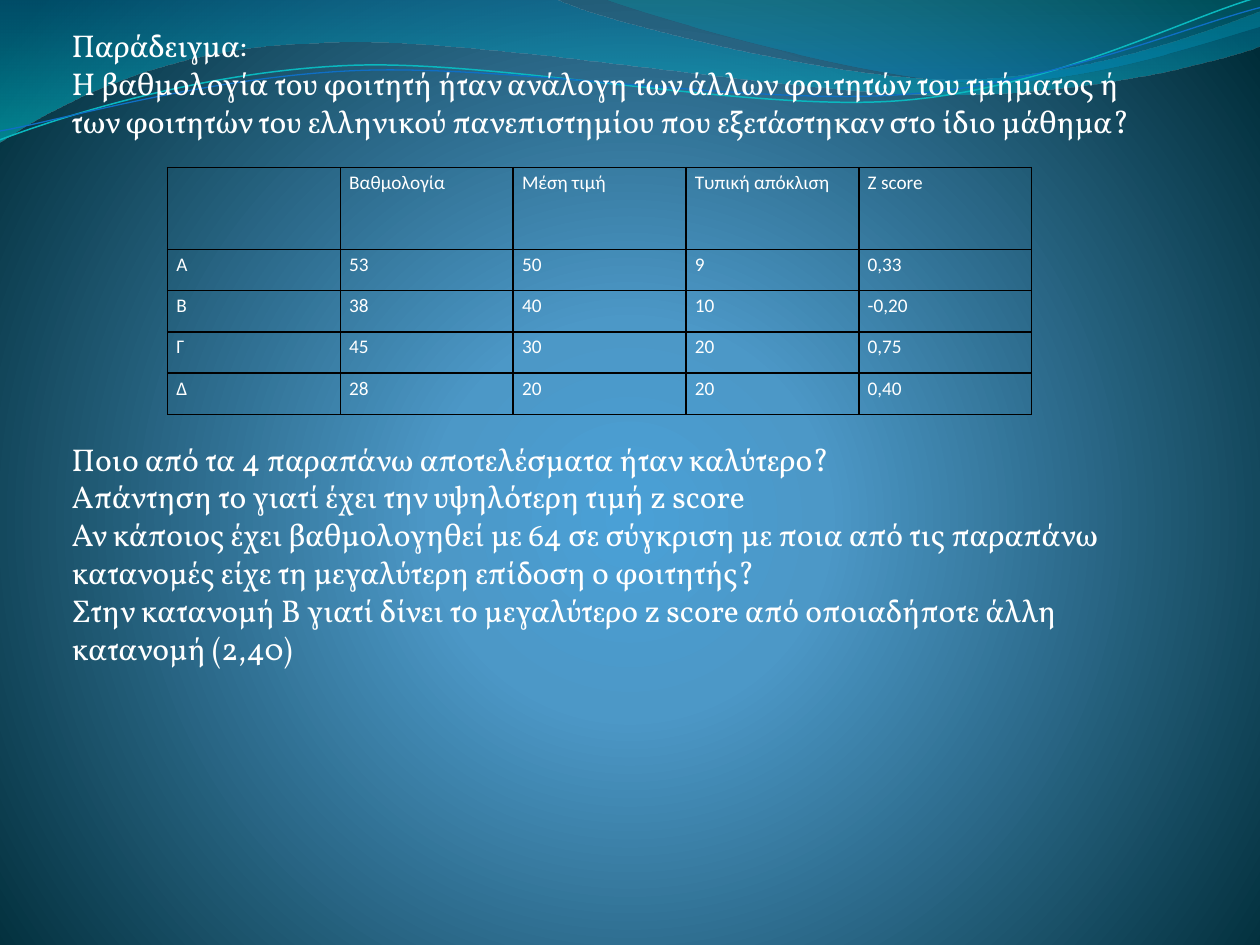
from math import cos, radians, sin

from lxml.etree import SubElement
from pptx import Presentation
from pptx.dml.color import RGBColor
from pptx.enum.text import MSO_AUTO_SIZE
from pptx.oxml import parse_xml
from pptx.oxml.ns import nsdecls, qn
from pptx.util import Inches, Pt

WHITE = RGBColor(0xFF, 0xFF, 0xFF)
BLACK = RGBColor(0, 0, 0)
TEAL = RGBColor(0x0A, 0xB8, 0xBF)
BLUE = RGBColor(0x0F, 0x6F, 0xC6)
SKY = RGBColor(0x4A, 0xA0, 0xD6)
MID = RGBColor(0x4C, 0x98, 0xC7)
DEEP = RGBColor(0, 0x2C, 0x38)
SEA = RGBColor(0, 0x74, 0xA1)
AQUA = RGBColor(0, 0xC6, 0xCF)
JADE = RGBColor(0, 0xA1, 0xA9)
OCEAN = RGBColor(0, 0x8B, 0xBF)

TILT = 2.7
DOWN = '<a:lin ang="5400000" scaled="1"/>'
ROUND = ('<a:path path="circle"><a:fillToRect l="10000" t="110000" '
         'r="10000" b="100000"/></a:path>')

LEFT_WAVE = [(0, 0), (4.4, -0.01),
             (4.76, 0.17, 6.64, 0.63, 7.58, 0.63),
             (8.53, 0.63, 9.58, 0.26, 10, 0.09), (10.01, 0.36),
             (9.83, 0.44, 8.7, 0.76, 7.46, 0.75),
             (6.22, 0.75, 3.82, 0.28, 2.57, 0.34),
             (1.29, 0.36, 0.46, 0.83, -0.01, 1.13), (0, 0)]
RIGHT_WAVE = [(4.79, -0.01), (5.09, 0.11, 6.82, 0.62, 7.69, 0.65),
              (8.56, 0.69, 9.61, 0.32, 10, 0.21), (10, 0), (4.79, -0.01)]
TEAL_LINE = [(0, 1.11), (0.48, 0.93, 1.58, 0.57, 2.77, 0.52),
             (3.95, 0.47, 5.93, 0.89, 7.13, 0.8),
             (8.33, 0.71, 9.38, 0.15, 9.98, -0.02)]
BLUE_LINE = [(0, 1.04), (0.47, 0.96, 1.64, 0.61, 2.83, 0.56),
             (4.03, 0.51, 5.97, 0.84, 7.17, 0.75),
             (8.36, 0.67, 9.41, 0.21, 10, 0.06)]

INTRO = ["Παράδειγμα:",
         "Η βαθμολογία του φοιτητή ήταν ανάλογη των άλλων φοιτητών του "
         "τμήματος ή των φοιτητών του ελληνικού πανεπιστημίου που "
         "εξετάστηκαν στο ίδιο μάθημα?"]
ANSWERS = ["Ποιο από τα 4 παραπάνω αποτελέσματα ήταν καλύτερο?",
           "Απάντηση το γιατί έχει την υψηλότερη τιμή z score",
           "Αν κάποιος έχει βαθμολογηθεί με 64 σε σύγκριση με ποια από τις "
           "παραπάνω κατανομές είχε τη μεγαλύτερη επίδοση ο φοιτητής?",
           "Στην κατανομή Β γιατί δίνει το μεγαλύτερο z score από "
           "οποιαδήποτε άλλη κατανομή (2,40)"]
SCORES = [["", "Βαθμολογία", "Μέση τιμή", "Τυπική απόκλιση", "Z score"],
          ["Α", "53", "50", "9", "0,33"],
          ["Β", "38", "40", "10", "-0,20"],
          ["Γ", "45", "30", "20", "0,75"],
          ["Δ", "28", "20", "20", "0,40"]]


def set_grad(node, stops, shade):
    marks = ""
    for pos, color, alpha in stops:
        veil = f'<a:alpha val="{alpha * 1000}"/>' if alpha < 100 else ""
        marks += (f'<a:gs pos="{pos * 1000}"><a:srgbClr val="{color}">'
                  f'{veil}</a:srgbClr></a:gs>')
    grad = parse_xml(f'<a:gradFill {nsdecls("a")} rotWithShape="1">'
                     f'<a:gsLst>{marks}</a:gsLst>{shade}</a:gradFill>')
    node.replace(node.find(qn("a:solidFill")), grad)


def paint_back(slide):
    slide.background.fill.solid()
    node = slide.element.find(".//" + qn("p:bgPr"))
    set_grad(node, [(0, SKY, 100), (25, MID, 100), (100, DEEP, 100)], ROUND)


def to_local(step, box, tilt):
    left, top, width, height = box
    wave, rise = cos(radians(tilt)), sin(radians(tilt))
    points = []
    for x, y in zip(step[::2], step[1::2]):
        dx, dy = x - left - width / 2, y - top - height / 2
        points.append((Inches(dx * wave - dy * rise + width / 2),
                       Inches(dx * rise + dy * wave + height / 2)))
    return points


def draw_path(shapes, steps, box, close, tilt=0):
    locals_ = [to_local(step, box, tilt) for step in steps]
    pen = shapes.build_freeform(*locals_[0][0])
    pen.add_line_segments([points[-1] for points in locals_[1:]], close=close)
    shape = pen.convert_to_shape()
    shape.left, shape.top, shape.width, shape.height = map(Inches, box)
    shape.rotation = -tilt
    shape.shadow.inherit = False
    node = shape.element.find(".//" + qn("a:path"))
    node.set("w", str(shape.width))
    node.set("h", str(shape.height))
    for part, points in zip(list(node), locals_):
        curved = len(points) == 3
        tag = "a:cubicBezTo" if curved else part.tag
        fresh = SubElement(node, qn(tag) if curved else tag)
        for x, y in points:
            SubElement(fresh, qn("a:pt"), x=str(x), y=str(y))
        node.replace(part, fresh)
    return shape


def add_wave(slide, steps, box, stops):
    wave = draw_path(slide.shapes, steps, box, True)
    wave.line.fill.background()
    wave.fill.solid()
    set_grad(wave.element.spPr, stops, DOWN)


def add_curve(group, steps, box, color, width):
    curve = draw_path(group.shapes, steps, box, False, TILT)
    curve.fill.background()
    curve.line.color.rgb = color
    curve.line.width = Pt(width)


def add_run(para, text, face, size):
    run = para.add_run()
    run.text = text
    run.font.name = face
    run.font.size = Pt(size)
    run.font.bold = False
    run.font.color.rgb = WHITE


def add_text(slide, lines, left, top, width, height):
    box = slide.shapes.add_textbox(Inches(left), Inches(top),
                                   Inches(width), Inches(height))
    frame = box.text_frame
    frame.word_wrap = True
    frame.auto_size = MSO_AUTO_SIZE.SHAPE_TO_FIT_TEXT
    for i, line in enumerate(lines):
        para = frame.add_paragraph() if i else frame.paragraphs[0]
        add_run(para, line, "Vollkorn", 18)


def set_edges(cell):
    props = cell._tc.get_or_add_tcPr()
    for side in ("L", "R", "T", "B"):
        edge = SubElement(props, qn("a:ln" + side), w=str(Pt(1)))
        fill = SubElement(edge, qn("a:solidFill"))
        SubElement(fill, qn("a:srgbClr"), val=str(BLACK))


def fill_cell(cell, text):
    set_edges(cell)
    cell.fill.background()
    cell.margin_left = cell.margin_right = Inches(0.07)
    cell.margin_top = cell.margin_bottom = 0
    if text:
        para = cell.text_frame.paragraphs[0]
        para.line_spacing = 1.15
        add_run(para, text, "Calibri", 11)


def add_scores(slide):
    frame = slide.shapes.add_table(len(SCORES), len(SCORES[0]), Inches(1.33),
                                   Inches(1.33), Inches(6.86), Inches(1.96))
    table = frame.table
    table.first_row = table.horz_banding = False
    for r, row in enumerate(SCORES):
        table.rows[r].height = Inches((1.96 - 0.65) / 4 if r else 0.65)
        for c, text in enumerate(row):
            fill_cell(table.cell(r, c), text)


def main():
    deck = Presentation()
    deck.slide_width = Inches(10)
    deck.slide_height = Inches(7.5)
    slide = deck.slides.add_slide(deck.slide_layouts[6])
    paint_back(slide)
    add_wave(slide, LEFT_WAVE, (-0.01, -0.01, 10.02, 1.14),
             [(0, SEA, 45), (100, AQUA, 55)])
    add_wave(slide, RIGHT_WAVE, (4.79, -0.01, 5.21, 0.7),
             [(0, JADE, 30), (80, OCEAN, 45)])
    group = slide.shapes.add_group_shape()
    add_curve(group, TEAL_LINE, (-0.02, 0.22, 10.02, 0.71), TEAL, 0.85)
    add_curve(group, BLUE_LINE, (-0.02, 0.3, 10.03, 0.58), BLUE, 0.75)
    add_text(slide, INTRO, 0.47, 0.16, 8.67, 1.31)
    add_scores(slide)
    add_text(slide, ANSWERS, 0.47, 3.44, 8.52, 1.92)
    deck.save("out.pptx")


if __name__ == "__main__":
    main()
